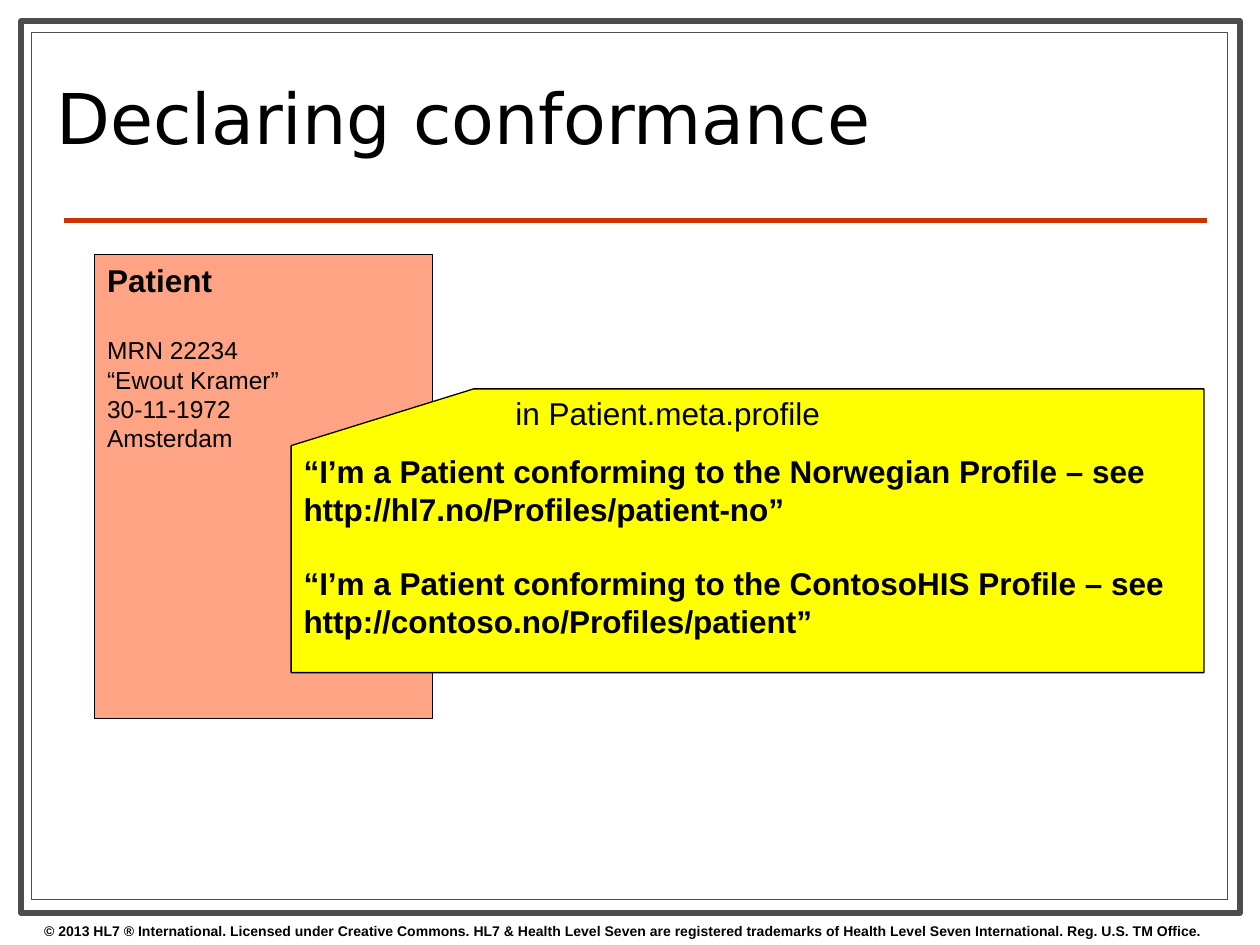
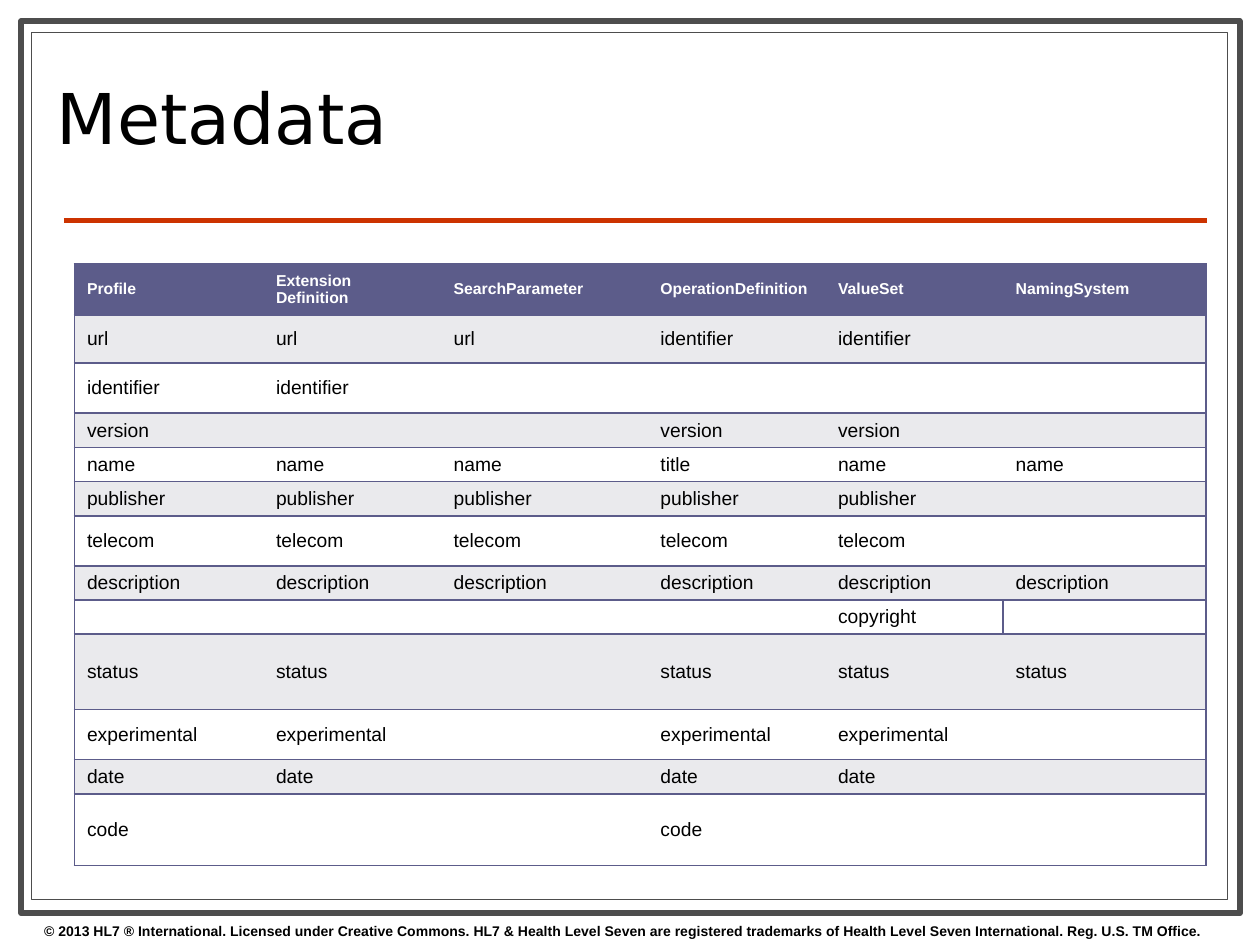
from lxml.etree import SubElement
from pptx import Presentation
from pptx.dml.color import RGBColor
from pptx.enum.shapes import MSO_CONNECTOR as Connector, MSO_SHAPE as Shape
from pptx.enum.text import MSO_ANCHOR as Anchor, PP_ALIGN as Align
from pptx.oxml.ns import qn
from pptx.util import Cm, Pt

COLORS = {
    "paper": "FFFFFF",
    "ink": "000000",
    "frame": "4D4D4D",
    "rule": "CC3300",
    "patient": "FFA385",
    "card": "FFFF00",
    "header": "5C5C8A",
    "band": "EAEAED",
}
BODY_FONT = "Arial"
TITLE_FONT = "DejaVu Sans"
FRAMES = [((0.43, 0.43, 24.56, 17.98), 3.5), ((0.64, 0.66, 24.1, 17.48), 0.75)]
TITLE_BOX = (0.89, 0.91, 18.21, 3.2)
FOOTER_BOX = (0.64, 18.47, 25.4, 0.58)
FOOTER = (
    "© 2013 HL7 ® International. Licensed under Creative Commons. "
    "HL7 & Health Level Seven are registered trademarks of "
    "Health Level Seven International. Reg. U.S. TM Office."
)

COLUMN_WIDTHS = [3.81, 3.58, 4.17, 3.58, 3.58, 4.09]
ROW_HEIGHTS = [1.03, 0.97, 1.01, 0.69, 0.69, 0.69, 1.01, 0.69, 0.69, 1.52, 1.01, 0.69, 1.44]
METADATA = [
    ["Profile", "Extension\vDefinition", "SearchParameter", "OperationDefinition", "ValueSet", "NamingSystem"],
    ["url", "url", "url", "identifier", "identifier", ""],
    ["identifier", "identifier", "", "", "", ""],
    ["version", "", "", "version", "version", ""],
    ["name", "name", "name", "title", "name", "name"],
    ["publisher"] * 5 + [""],
    ["telecom"] * 5 + [""],
    ["description"] * 6,
    ["", "", "", "", "copyright", ""],
    ["status", "status", "", "status", "status", "status"],
    ["experimental", "experimental", "", "experimental", "experimental", ""],
    ["date", "date", "", "date", "date", ""],
    ["code", "", "", "code", "", ""],
]
MERGES = [((2, 2), (2, 5)), ((8, 0), (8, 3))]
DIVIDED_CELL = (8, 5)


def rgb(name):
    return RGBColor.from_string(COLORS[name])


def lengths(box):
    return [Cm(value) for value in box]


def style(para, size, bold=False, color="ink", font=BODY_FONT):
    para.font.name = font
    para.font.size = Pt(size)
    para.font.bold = bold
    para.font.color.rgb = rgb(color)


def add_box(page, kind, box, fill, line, width):
    shape = page.shapes.add_shape(kind, *lengths(box))
    shape.shadow.inherit = False
    shape.fill.solid()
    shape.fill.fore_color.rgb = rgb(fill)
    shape.line.color.rgb = rgb(line)
    shape.line.width = Pt(width)
    return shape


def write(shape, lines):
    frame = shape.text_frame
    frame.word_wrap = True
    frame.vertical_anchor = Anchor.TOP
    for index, (text, size, bold, gap) in enumerate(lines):
        para = frame.add_paragraph() if index else frame.paragraphs[0]
        para.text = text
        para.alignment = Align.LEFT
        if gap:
            para.space_before = Pt(gap)
        style(para, size, bold)


def add_label(page, box, text, size, bold=False):
    write(page.shapes.add_textbox(*lengths(box)), [(text, size, bold, 0)])


def add_page(deck, heading):
    page = deck.slides.add_slide(deck.slide_layouts[5])
    for box, width in FRAMES:
        add_box(page, Shape.RECTANGLE, box, "paper", "frame", width)
    rule = page.shapes.add_connector(Connector.STRAIGHT, *lengths((1.29, 4.45, 24.33, 4.45)))
    rule.line.color.rgb = rgb("rule")
    rule.line.width = Pt(3)
    SubElement(rule._element.spPr, qn("a:effectLst"))
    add_label(page, FOOTER_BOX, FOOTER, 8, True)

    title = page.shapes.title
    title.left, title.top, title.width, title.height = lengths(TITLE_BOX)
    title.text_frame.text = heading
    title.text_frame.vertical_anchor = Anchor.MIDDLE
    para = title.text_frame.paragraphs[0]
    para.alignment = Align.LEFT
    para.line_spacing = 0.8
    style(para, 40, font=TITLE_FONT)
    page.shapes._spTree.append(title._element)
    return page


def add_patient_record(page, box):
    left, top, width, height = box
    record = add_box(page, Shape.RECTANGLE, box, "patient", "ink", 0.75)
    write(record, [
        ("Patient", 18, True, 0),
        ("MRN 22234", 14, False, 21),
        ("“Ewout Kramer”", 14, False, 0),
        ("30-11-1972", 14, False, 0),
        ("Amsterdam", 14, False, 0),
    ])
    card_left, card_top = left + 3.96, top + 2.71
    card_box = (card_left, card_top, 18.4, 5.72)
    card = add_box(page, Shape.FLOWCHART_CARD, card_box, "card", "ink", 0.75)
    claim = "“I’m a Patient conforming to the {} Profile – see {}”"
    write(card, [
        (claim.format("Norwegian", "http://hl7.no/Profiles/patient-no"), 18, True, 0),
        (claim.format("ContosoHIS", "http://contoso.no/Profiles/patient"), 18, True, 21),
    ])
    add_label(page, (card_left + 4.27, card_top - 0.02, 7.6, 1.8), "in Patient.meta.profile", 18)


def set_borders(cell, row, column):
    last = len(COLUMN_WIDTHS)
    shown = {
        "a:lnL": column == 0 or (row, column) == DIVIDED_CELL,
        "a:lnR": column + cell.span_width == last or (row, column + 1) == DIVIDED_CELL,
        "a:lnT": True,
        "a:lnB": True,
    }
    properties = cell._tc.get_or_add_tcPr()
    for tag, visible in shown.items():
        line = SubElement(properties, qn(tag), w=str(Pt(1)))
        if visible:
            fill = SubElement(line, qn("a:solidFill"))
            SubElement(fill, qn("a:srgbClr"), val=COLORS["header"])
        else:
            SubElement(line, qn("a:noFill"))


def fill_cell(cell, text, row):
    size = 11 if row else 9
    cell.vertical_anchor = Anchor.MIDDLE
    cell.fill.solid()
    cell.fill.fore_color.rgb = rgb(("band" if row % 2 else "paper") if row else "header")
    cell.text = text
    para = cell.text_frame.paragraphs[0]
    style(para, size, row == 0, "ink" if row else "paper")
    if not text:
        SubElement(para._p, qn("a:endParaRPr"), sz=str(size * 100))


def add_metadata_table(page, left, top):
    box = (left, top, sum(COLUMN_WIDTHS), sum(ROW_HEIGHTS))
    table = page.shapes.add_table(len(ROW_HEIGHTS), len(COLUMN_WIDTHS), *lengths(box)).table
    for column, width in zip(table.columns, COLUMN_WIDTHS):
        column.width = Cm(width)
    for row, height in zip(table.rows, ROW_HEIGHTS):
        row.height = Cm(height)
    for first, final in MERGES:
        table.cell(*first).merge(table.cell(*final))
    for row, texts in enumerate(METADATA):
        for column, text in enumerate(texts):
            cell = table.cell(row, column)
            set_borders(cell, row, column)
            fill_cell(cell, text, row)


def main():
    deck = Presentation()
    deck.slide_width, deck.slide_height = Cm(25.4), Cm(19.05)
    add_patient_record(add_page(deck, "Declaring conformance"), (1.91, 5.13, 6.81, 9.35))
    add_metadata_table(add_page(deck, "Metadata"), 1.5, 5.32)
    deck.save("out.pptx")


if __name__ == "__main__":
    main()
